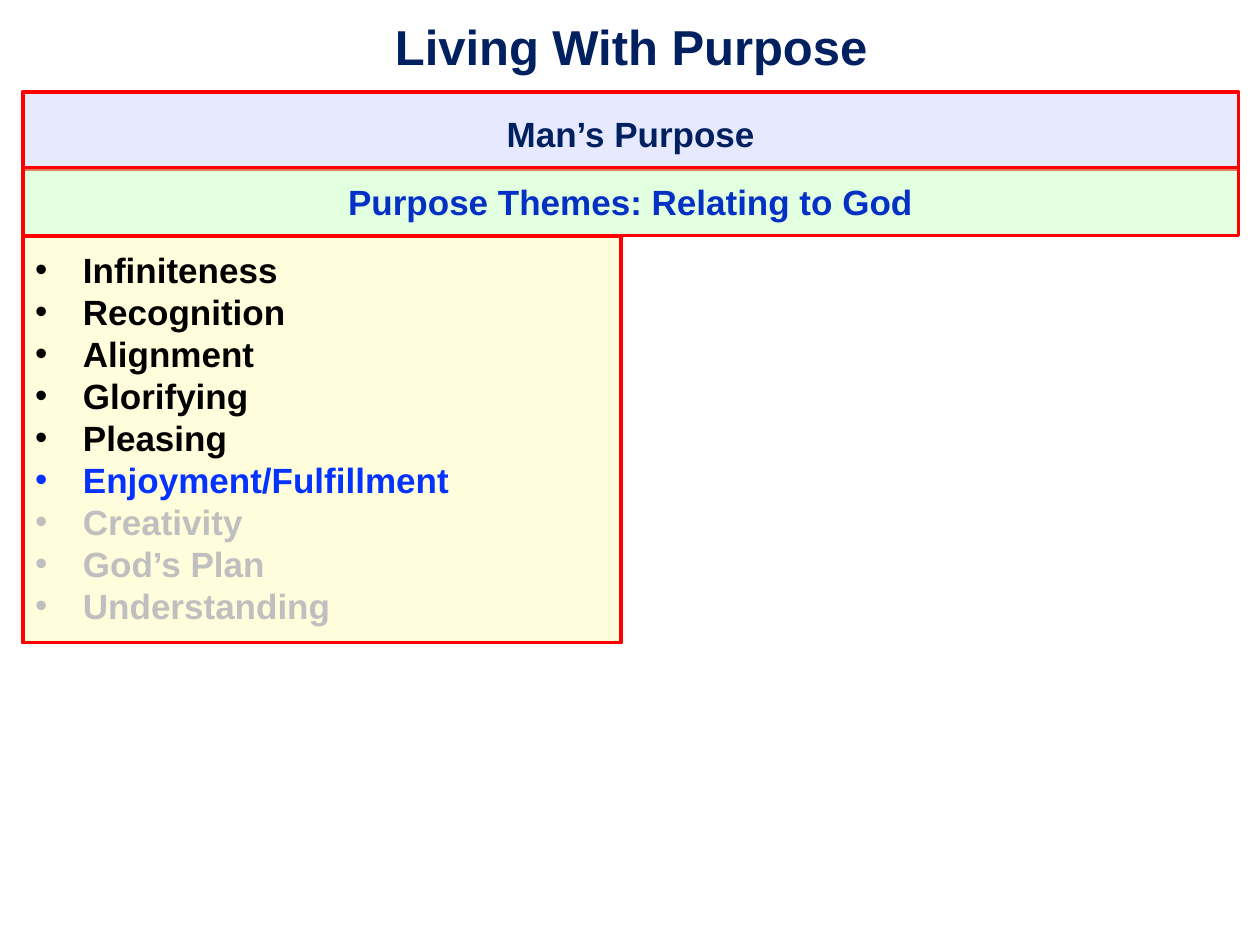
from dataclasses import dataclass

from lxml import etree
from pptx import Presentation
from pptx.dml.color import RGBColor
from pptx.enum.shapes import MSO_SHAPE
from pptx.enum.text import MSO_ANCHOR, MSO_AUTO_SIZE, PP_ALIGN
from pptx.oxml.ns import qn
from pptx.util import Inches, Pt

RECTANGLE = MSO_SHAPE.RECTANGLE
TOP, MIDDLE = MSO_ANCHOR.TOP, MSO_ANCHOR.MIDDLE
GROW = MSO_AUTO_SIZE.SHAPE_TO_FIT_TEXT
LEFT, CENTER = PP_ALIGN.LEFT, PP_ALIGN.CENTER

FONT = "Arial"
NAVY, RED, BLACK = "002060", "FF0000", "000000"
HIGHLIGHT, MUTED = "0432FF", "BFBFBF"
PANEL_LEFT = 0.18
BULLET_INDENT = 0.38


@dataclass(frozen=True)
class Line:
    text: str
    color: str


@dataclass(frozen=True)
class Panel:
    top: float
    width: float
    height: float
    fill: str
    opacity: int
    lines: list[Line]
    align: PP_ALIGN = CENTER
    spacing: float = 1.0
    bullet: bool = False


THEMES = [
    *(Line(theme, BLACK) for theme in
      ("Infiniteness", "Recognition", "Alignment", "Glorifying", "Pleasing")),
    Line("Enjoyment/Fulfillment", HIGHLIGHT),
    *(Line(theme, MUTED) for theme in ("Creativity", "God’s Plan", "Understanding")),
]

PANELS = [
    Panel(0.73, 9.65, 0.61, "D0D6FF", 50, [Line("Man’s Purpose", NAVY)], spacing=1.2),
    Panel(1.33, 9.65, 0.54, "C5FFC1", 49,
          [Line("Purpose Themes: Relating to God", "0530C4")]),
    Panel(1.87, 4.75, 3.23, "FFFDB8", 50, THEMES, align=LEFT, bullet=True),
]


def rgb(color: str) -> RGBColor:
    return RGBColor.from_string(color)


def set_frame(frame, margins: tuple[float, float, float, float], anchor: MSO_ANCHOR) -> None:
    frame.word_wrap = True
    frame.vertical_anchor = anchor
    frame.margin_left, frame.margin_top, frame.margin_right, frame.margin_bottom = map(
        Inches, margins)


def write_text(paragraph, text: str, *, color: str, size: float = 20,
               align: PP_ALIGN = CENTER, spacing: float = 1.0, bullet: bool = False) -> None:
    paragraph.alignment = align
    paragraph.line_spacing = spacing
    if bullet:
        properties = paragraph._p.get_or_add_pPr()
        properties.set("marL", str(Inches(BULLET_INDENT)))
        properties.set("indent", str(-Inches(BULLET_INDENT)))
        etree.SubElement(properties, qn("a:buFont"), typeface=FONT)
        etree.SubElement(properties, qn("a:buChar"), char="•")
    run = paragraph.add_run()
    run.text = text
    run.font.name = FONT
    run.font.size = Pt(size)
    run.font.bold = True
    run.font.color.rgb = rgb(color)


def draw_title(slide, text: str) -> None:
    box = slide.shapes.add_textbox(Inches(0.14), Inches(0.02), Inches(9.78), Inches(0.69))
    set_frame(box.text_frame, (0.1, 0.06, 0.14, 0.06), MIDDLE)
    write_text(box.text_frame.paragraphs[0], text, color=NAVY, size=28)


def draw_panel(slide, panel: Panel) -> None:
    shape = slide.shapes.add_shape(RECTANGLE, Inches(PANEL_LEFT), Inches(panel.top),
                                   Inches(panel.width), Inches(panel.height))
    shape.shadow.inherit = False
    shape.fill.solid()
    shape.fill.fore_color.rgb = rgb(panel.fill)
    fill_color = shape._element.spPr.find(qn("a:solidFill")).find(qn("a:srgbClr"))
    etree.SubElement(fill_color, qn("a:alpha"), val=str(panel.opacity * 1000))
    shape.line.color.rgb = rgb(RED)
    shape.line.width = Pt(2.25)
    frame = shape.text_frame
    set_frame(frame, (0.1, 0.1, 0.1, 0.1), TOP)
    frame.auto_size = GROW
    for index, line in enumerate(panel.lines):
        paragraph = frame.add_paragraph() if index else frame.paragraphs[0]
        write_text(paragraph, line.text, color=line.color, align=panel.align,
                   spacing=panel.spacing, bullet=panel.bullet)


def main() -> None:
    presentation = Presentation()
    presentation.slide_width = Inches(10)
    presentation.slide_height = Inches(7.5)
    slide = presentation.slides.add_slide(presentation.slide_layouts[6])
    draw_title(slide, "Living With Purpose")
    for panel in PANELS:
        draw_panel(slide, panel)
    presentation.save("out.pptx")


if __name__ == "__main__":
    main()
